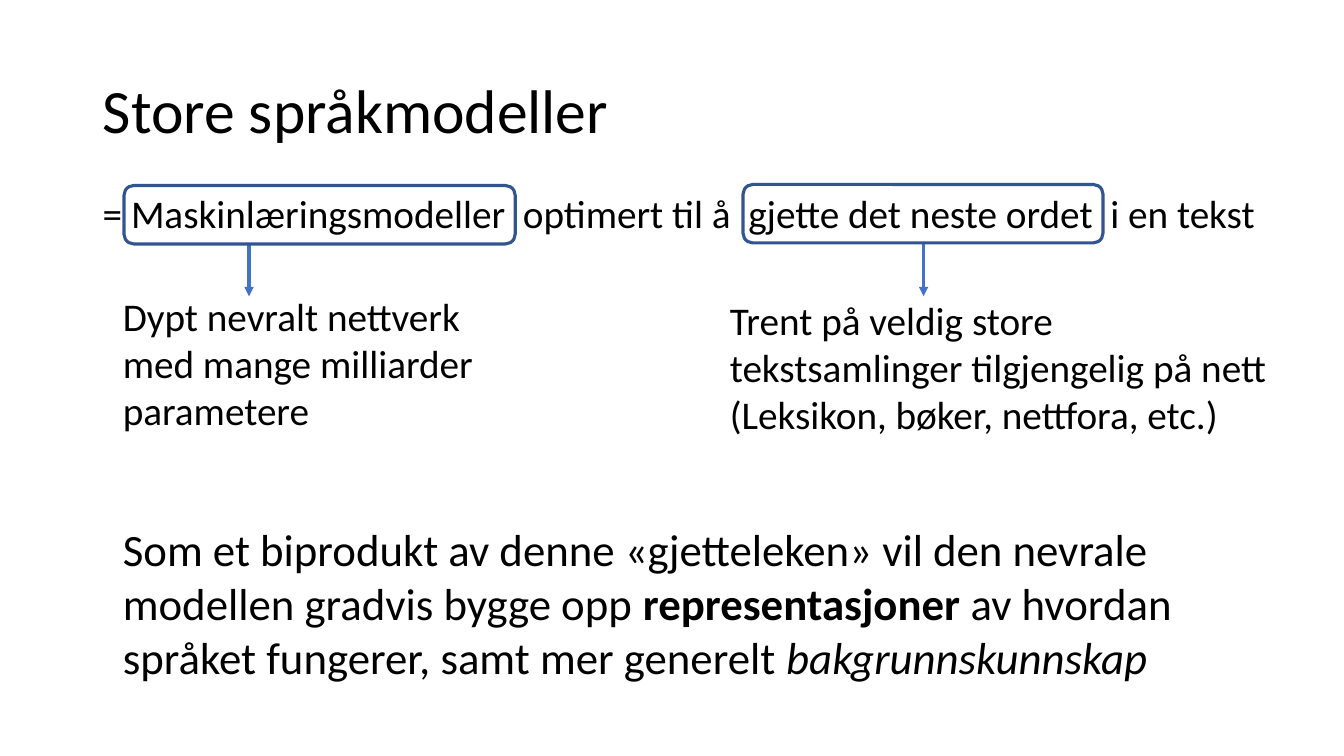
from lxml.etree import SubElement
from pptx import Presentation
from pptx.dml.color import RGBColor
from pptx.enum.shapes import MSO_CONNECTOR, MSO_SHAPE
from pptx.enum.text import MSO_ANCHOR, PP_ALIGN
from pptx.oxml.ns import qn
from pptx.util import Inches, Pt

BLACK = RGBColor(0x00, 0x00, 0x00)
ARROW_BLUE = RGBColor(0x44, 0x72, 0xC4)
FRAME_BLUE = RGBColor(0x32, 0x54, 0x91)
FONT = "Calibri"
LINE_WIDTH = Pt(2.25)
WIDE_SPACE = (" ", "wide")

TITLE = "Store språkmodeller"
DEFINITION = [[
    ("= Maskinlæringsmodeller", ""), WIDE_SPACE,
    ("optimert til å", ""), WIDE_SPACE,
    ("gjette det neste ordet", ""), WIDE_SPACE,
    ("i en tekst", ""),
]]
NETWORK = [
    [("Dypt nevralt nettverk", "")],
    [("med mange milliarder parametere", "")],
]
TRAINING = [[("Trent på veldig store tekstsamlinger tilgjengelig på nett "
              "(Leksikon, bøker, nettfora, etc.)", "")]]
BYPRODUCT = [[
    ("Som et biprodukt av denne «gjetteleken» vil den nevrale modellen "
     "gradvis bygge opp ", ""),
    ("representasjoner", "bold"),
    (" av hvordan språket fungerer, samt mer generelt ", ""),
    ("bakgrunnskunnskap", "italic"),
]]

TEXT_BOXES = [
    (DEFINITION, (0.92, 1.83, 11.88, 0.57), 28),
    (NETWORK, (1.12, 2.85, 4.84, 1.51), 28),
    (TRAINING, (7.14, 2.89, 5.75, 1.51), 28),
    (BYPRODUCT, (1.12, 5.13, 10.95, 1.72), 32),
]
FRAMES = [(1.23, 1.84, 3.88, 0.58), (7.37, 1.83, 3.57, 0.58)]
ARROW_XS = [2.47, 9.16]
ARROW_TOP, ARROW_BOTTOM = 2.41, 2.94


def write_text(tf, paragraphs, size, color=BLACK, line_spacing=None):
    tf.word_wrap = True
    for i, runs in enumerate(paragraphs):
        p = tf.paragraphs[0] if i == 0 else tf.add_paragraph()
        p.alignment = PP_ALIGN.LEFT
        p.line_spacing = line_spacing
        for text, style in runs:
            r = p.add_run()
            r.text = text
            r.font.name = FONT
            r.font.size = Pt(size)
            r.font.color.rgb = color
            r.font.bold = style == "bold"
            r.font.italic = style == "italic"
            if style == "wide":
                r.font._element.set("spc", str(round(size * 22.6)))


def add_frame(s, box):
    sp = s.shapes.add_shape(MSO_SHAPE.ROUNDED_RECTANGLE, *map(Inches, box))
    sp.shadow.inherit = False
    sp.fill.background()
    sp.line.color.rgb = FRAME_BLUE
    sp.line.width = LINE_WIDTH


def add_arrow(s, x):
    cx = s.shapes.add_connector(MSO_CONNECTOR.STRAIGHT, Inches(x), Inches(ARROW_TOP),
                                Inches(x), Inches(ARROW_BOTTOM))
    cx.line.color.rgb = ARROW_BLUE
    cx.line.width = LINE_WIDTH
    SubElement(cx.line._get_or_add_ln(), qn("a:tailEnd"), type="triangle")
    SubElement(cx._element.spPr, qn("a:effectLst"))


def main():
    prs = Presentation()
    prs.slide_width, prs.slide_height = Inches(13.33), Inches(7.5)
    s = prs.slides.add_slide(prs.slide_layouts[5])

    title = s.shapes.title
    title.left, title.top, title.width, title.height = map(Inches, (0.92, 0.4, 11.5, 1.45))
    title.text_frame.vertical_anchor = MSO_ANCHOR.MIDDLE
    write_text(title.text_frame, [[(TITLE, "")]], 44, line_spacing=0.9)

    for paragraphs, box, size in TEXT_BOXES:
        sp = s.shapes.add_textbox(*map(Inches, box))
        write_text(sp.text_frame, paragraphs, size)
    for x, frame in zip(ARROW_XS, FRAMES):
        add_arrow(s, x)
        add_frame(s, frame)

    prs.save("out.pptx")


if __name__ == "__main__":
    main()
